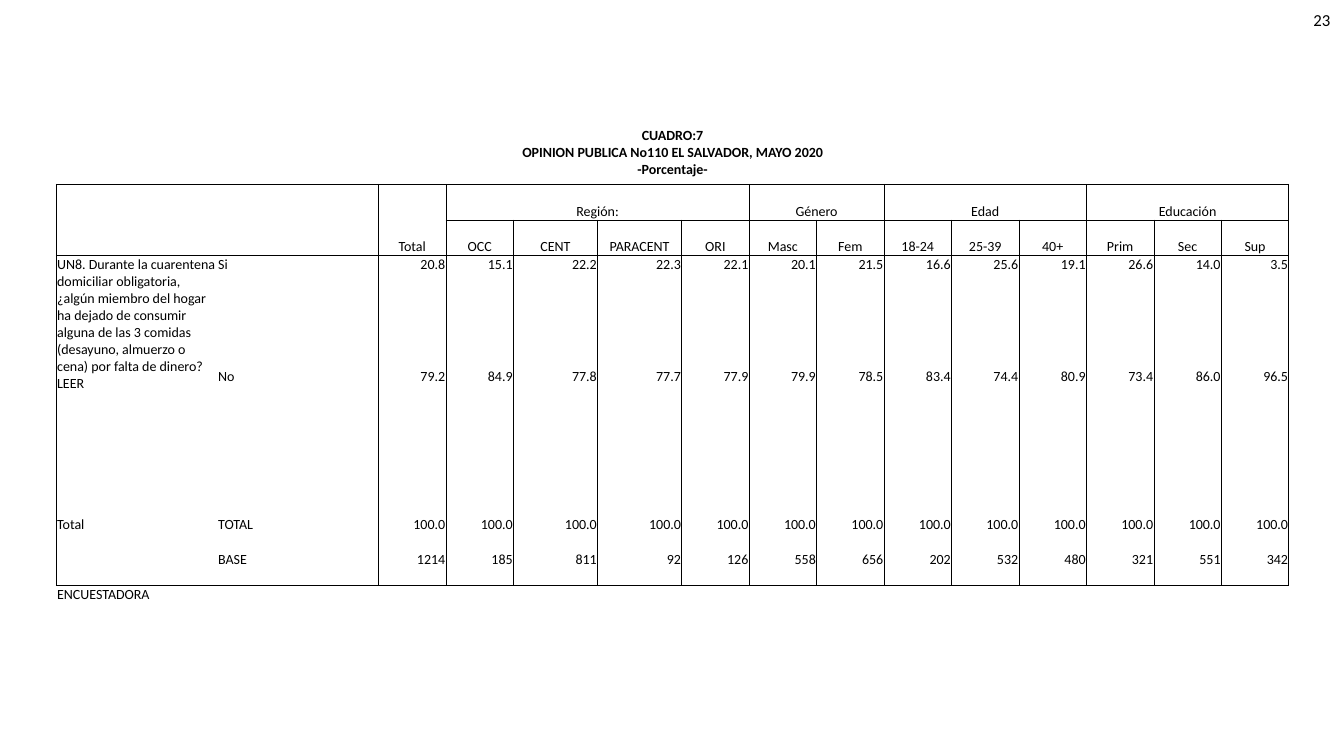
from pptx import Presentation
from pptx.dml.color import RGBColor
from pptx.enum.text import MSO_ANCHOR as Anchor, PP_ALIGN as Align
from pptx.oxml.ns import qn
from pptx.util import Cm, Pt
from lxml.etree import SubElement

COLORS = {"ink": "000000"}
FONT = "Calibri"
NO_STYLE = "{2D5ABB26-0587-4C30-8999-92F81FD0307C}"

COL_WIDTHS = [4.06] * 2 + [1.7] * 2 + [2.12] * 2 + [1.7] * 9
ROW_HEIGHTS = [1.63, 0.89, 0.89, 2.82, 3.73, 0.89, 0.89, 2.21]
FIRST_GROUP_COL = 3

TITLE = [
    "CUADRO:7",
    "OPINION PUBLICA No110 EL SALVADOR, MAYO 2020",
    "-Porcentaje-",
]
GROUPS = {
    "Región:": ["OCC", "CENT", "PARACENT", "ORI"],
    "Género": ["Masc", "Fem"],
    "Edad": ["18-24", "25-39", "40+"],
    "Educación": ["Prim", "Sec", "Sup"],
}
QUESTION = (
    "UN8. Durante la cuarentena domiciliar obligatoria, ¿algún miembro del "
    "hogar ha dejado de consumir alguna de las 3 comidas (desayuno, almuerzo "
    "o cena) por falta de dinero? LEER"
)
ANSWERS = {
    "Si": "20.8 15.1 22.2 22.3 22.1 20.1 21.5 16.6 25.6 19.1 26.6 14.0 3.5".split(),
    "No": "79.2 84.9 77.8 77.7 77.9 79.9 78.5 83.4 74.4 80.9 73.4 86.0 96.5".split(),
    "TOTAL": ["100.0"] * 13,
    "BASE": "1214 185 811 92 126 558 656 202 532 480 321 551 342".split(),
}
SOURCE = "ENCUESTADORA"


def write(tf, *lines, size=10, bold=False, align=Align.LEFT):
    for i, line in enumerate(lines):
        p = tf.paragraphs[0] if i == 0 else tf.add_paragraph()
        p.alignment = align
        r = p.add_run()
        r.text = line
        r.font.name, r.font.size, r.font.bold = FONT, Pt(size), bold
        r.font.color.rgb = RGBColor.from_string(COLORS["ink"])


def fill_cell(cell, *lines, anchor=Anchor.TOP, **fmt):
    cell.vertical_anchor = anchor
    write(cell.text_frame, *lines, **fmt)


def add_page_number(s, number):
    tf = s.shapes.add_textbox(Cm(26.16), 0, Cm(7.62), Cm(1.02)).text_frame
    tf.word_wrap = True
    tf.vertical_anchor = Anchor.MIDDLE
    write(tf, number, size=12, align=Align.RIGHT)


def add_grid(s):
    frame = s.shapes.add_table(
        len(ROW_HEIGHTS), len(COL_WIDTHS), Cm(1.42), Cm(3.02),
        Cm(sum(COL_WIDTHS)), Cm(sum(ROW_HEIGHTS)))
    table = frame.table
    table.first_row = table.horz_banding = False
    table._tbl.tblPr.find(qn("a:tableStyleId")).text = NO_STYLE
    for col, width in zip(table.columns, COL_WIDTHS):
        col.width = Cm(width)
    for row, height in zip(table.rows, ROW_HEIGHTS):
        row.height = Cm(height)
    for cell in table.iter_cells():
        cell.margin_left = cell.margin_right = cell.margin_top = Cm(0.02)
        cell.margin_bottom = 0
    return table


def merge(table, row, col, height, width):
    cell = table.cell(row, col)
    cell.merge(table.cell(row + height - 1, col + width - 1))
    return cell


def add_header(table):
    head = dict(anchor=Anchor.BOTTOM, align=Align.CENTER)
    fill_cell(merge(table, 0, 0, 1, len(COL_WIDTHS)), *TITLE,
              anchor=Anchor.MIDDLE, align=Align.CENTER, bold=True)
    merge(table, 1, 0, 2, 2)
    fill_cell(merge(table, 1, 2, 2, 1), "Total", **head)
    col = FIRST_GROUP_COL
    for group, names in GROUPS.items():
        fill_cell(merge(table, 1, col, 1, len(names)), group, **head)
        for name in names:
            fill_cell(table.cell(2, col), name, **head)
            col += 1


def add_answers(table):
    fill_cell(merge(table, 3, 0, 2, 1), QUESTION)
    fill_cell(merge(table, 5, 0, 2, 1), "Total")
    for row, (answer, values) in enumerate(ANSWERS.items(), 3):
        fill_cell(table.cell(row, 1), answer)
        for col, value in enumerate(values, 2):
            fill_cell(table.cell(row, col), value, align=Align.RIGHT)
    fill_cell(merge(table, 7, 0, 1, len(COL_WIDTHS)), SOURCE)


def vertical_rule(row, x):
    """Width of the rule at column edge x."""
    edges = {FIRST_GROUP_COL}
    for names in GROUPS.values():
        edges.add(max(edges) + len(names))
    if not 1 <= row <= 6 or x == 1:
        return 0
    if x in (0, 2, len(COL_WIDTHS)):
        return 1
    return 0.5 if row > 1 or x in edges else 0


def horizontal_rule(y, col):
    """Width of the rule at row edge y."""
    if y in (1, 3, 7):
        return 1
    return 0.5 if y == 2 and col >= FIRST_GROUP_COL else 0


def set_border(cell, side, width):
    ln = SubElement(cell._tc.get_or_add_tcPr(), qn(f"a:ln{side}"), w=str(Pt(width)))
    if width:
        fill = SubElement(ln, qn("a:solidFill"))
        SubElement(fill, qn("a:srgbClr"), val=COLORS["ink"])
    else:
        SubElement(ln, qn("a:noFill"))


def draw_rules(table):
    for row in range(len(ROW_HEIGHTS)):
        for col in range(len(COL_WIDTHS)):
            cell = table.cell(row, col)
            origin = cell.is_merge_origin
            right = col + (cell.span_width if origin else 1)
            bottom = row + (cell.span_height if origin else 1)
            set_border(cell, "L", vertical_rule(row, col))
            set_border(cell, "R", vertical_rule(row, right))
            set_border(cell, "T", horizontal_rule(row, col))
            set_border(cell, "B", horizontal_rule(bottom, col))
            cell.fill.background()


def main():
    prs = Presentation()
    prs.slide_width, prs.slide_height = Cm(33.87), Cm(19.05)
    s = prs.slides.add_slide(prs.slide_layouts[6])

    # Page number
    add_page_number(s, "23")

    # Survey table
    table = add_grid(s)
    add_header(table)
    add_answers(table)
    draw_rules(table)

    prs.save("out.pptx")


if __name__ == "__main__":
    main()
